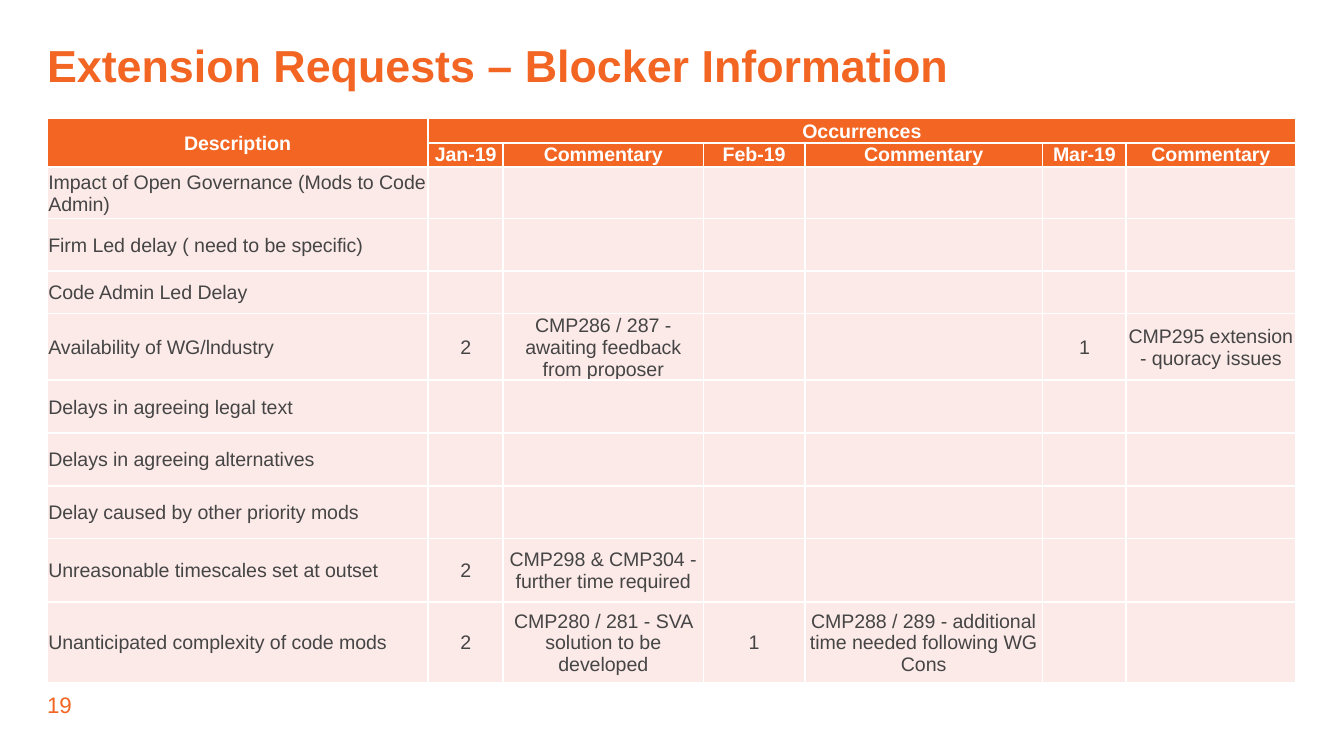
import pptx
import pptx.dml.color
import pptx.enum.text
import pptx.oxml
import pptx.oxml.ns
import pptx.util

Pt = pptx.util.Pt
RGBColor = pptx.dml.color.RGBColor
ALIGN = pptx.enum.text.PP_ALIGN
ANCHOR = pptx.enum.text.MSO_ANCHOR
AUTO_SIZE = pptx.enum.text.MSO_AUTO_SIZE

ORANGE = RGBColor(0xF2, 0x65, 0x22)
BLUSH = RGBColor(0xFC, 0xEA, 0xE8)
GREY = RGBColor(0x45, 0x45, 0x45)
WHITE = RGBColor(0xFF, 0xFF, 0xFF)

LEFT, WIDTH = 25.2, 669
COLUMN_WIDTHS = [204.2, 40.2, 107.3, 54.3, 127.4, 44.8, 90.8]
ROW_HEIGHTS = [13, 13, 27.6, 28.3, 22.6, 35.5, 28.3, 28.3, 28.3, 34, 43.4]

HEADER = ["Jan-19", "Commentary", "Feb-19", "Commentary", "Mar-19", "Commentary"]
BLOCKERS = [
    "Impact of Open Governance (Mods to Code Admin)",
    "Firm Led delay ( need to be specific)",
    "Code Admin Led Delay",
    "Availability of WG/lndustry",
    "Delays in agreeing legal text",
    "Delays in agreeing alternatives",
    "Delay caused by other priority mods",
    "Unreasonable timescales set at outset",
    "Unanticipated complexity of code mods",
]
# Filled occurrence cells, by (blocker, column)
OCCURRENCES = {
    (3, 1): "2",
    (3, 2): "CMP286 / 287 - awaiting feedback from proposer",
    (3, 5): "1",
    (3, 6): "CMP295 extension - quoracy issues",
    (7, 1): "2",
    (7, 2): "CMP298 & CMP304 - further time required",
    (8, 1): "2",
    (8, 2): "CMP280 / 281 - SVA solution to be developed",
    (8, 3): "1",
    (8, 4): "CMP288 / 289 - additional time needed following WG Cons",
}


def write_text(frame, text, size=10.5, color=GREY, bold=False, align=ALIGN.LEFT,
               line_spacing=None):
    paragraph = frame.paragraphs[0]
    paragraph.alignment = align
    if line_spacing:
        paragraph.line_spacing = line_spacing
    run = paragraph.add_run()
    run.text = text
    run.font.name = "Arial"
    run.font.size = Pt(size)
    run.font.bold = bold
    run.font.color.rgb = color


class SlideBuilder:
    def __init__(self, slide, accent=ORANGE):
        self.slide = slide
        self.accent = accent

    def clear_frame(self, frame):
        frame.margin_left = frame.margin_right = 0
        frame.margin_top = frame.margin_bottom = 0
        frame.word_wrap = True
        frame.auto_size = AUTO_SIZE.NONE
        frame.vertical_anchor = ANCHOR.TOP

    def title(self, text, top, height):
        shape = self.slide.shapes.title
        shape.left, shape.top = Pt(LEFT), Pt(top)
        shape.width, shape.height = Pt(WIDTH), Pt(height)
        self.clear_frame(shape.text_frame)
        write_text(shape.text_frame, text, size=24, color=self.accent, bold=True,
                   line_spacing=0.8)

    def page_number(self, text, top, width, height):
        shape = self.slide.shapes.add_textbox(Pt(LEFT), Pt(top), Pt(width), Pt(height))
        self.clear_frame(shape.text_frame)
        write_text(shape.text_frame, text, size=12, color=self.accent)

    def table(self, top):
        shape = self.slide.shapes.add_table(
            len(ROW_HEIGHTS), len(COLUMN_WIDTHS),
            Pt(LEFT), Pt(top), Pt(WIDTH), Pt(sum(ROW_HEIGHTS)))
        table = shape.table
        for column, width in zip(table.columns, COLUMN_WIDTHS):
            column.width = Pt(width)
        for row, height in zip(table.rows, ROW_HEIGHTS):
            row.height = Pt(height)
        for row_index, row in enumerate(table.rows):
            for cell in row.cells:
                self.format_cell(cell, self.accent if row_index < 2 else BLUSH)
        return table

    def format_cell(self, cell, color):
        cell.margin_left = cell.margin_right = cell.margin_top = Pt(0.7)
        cell.margin_bottom = 0
        cell.vertical_anchor = ANCHOR.MIDDLE
        properties = cell._tc.get_or_add_tcPr()
        for side in ("lnL", "lnR", "lnT", "lnB"):
            properties.append(pptx.oxml.parse_xml(
                f'<a:{side} {pptx.oxml.ns.nsdecls("a")} w="{Pt(1)}"><a:solidFill>'
                f'<a:srgbClr val="{WHITE}"/></a:solidFill></a:{side}>'))
        cell.fill.solid()
        cell.fill.fore_color.rgb = color

    def header_cell(self, cell, text):
        write_text(cell.text_frame, text, color=WHITE, bold=True, align=ALIGN.CENTER)


def main():
    presentation = pptx.Presentation()
    presentation.slide_width, presentation.slide_height = Pt(720), Pt(405)
    slide = presentation.slides.add_slide(presentation.slide_layouts[5])
    builder = SlideBuilder(slide)

    builder.title("Extension Requests – Blocker Information", top=25.9, height=23)

    # Table header
    table = builder.table(top=63.5)
    table.cell(0, 0).merge(table.cell(1, 0))
    table.cell(0, 1).merge(table.cell(0, 6))
    builder.header_cell(table.cell(0, 0), "Description")
    builder.header_cell(table.cell(0, 1), "Occurrences")
    for column, text in enumerate(HEADER, start=1):
        builder.header_cell(table.cell(1, column), text)
        table.cell(1, column).vertical_anchor = ANCHOR.TOP

    # Blockers and their occurrences
    for index, text in enumerate(BLOCKERS):
        write_text(table.cell(index + 2, 0).text_frame, text)
    for (index, column), text in OCCURRENCES.items():
        write_text(table.cell(index + 2, column).text_frame, text, align=ALIGN.CENTER)

    builder.page_number("19", top=370.1, width=65.5, height=14.4)
    presentation.save("out.pptx")


if __name__ == "__main__":
    main()
